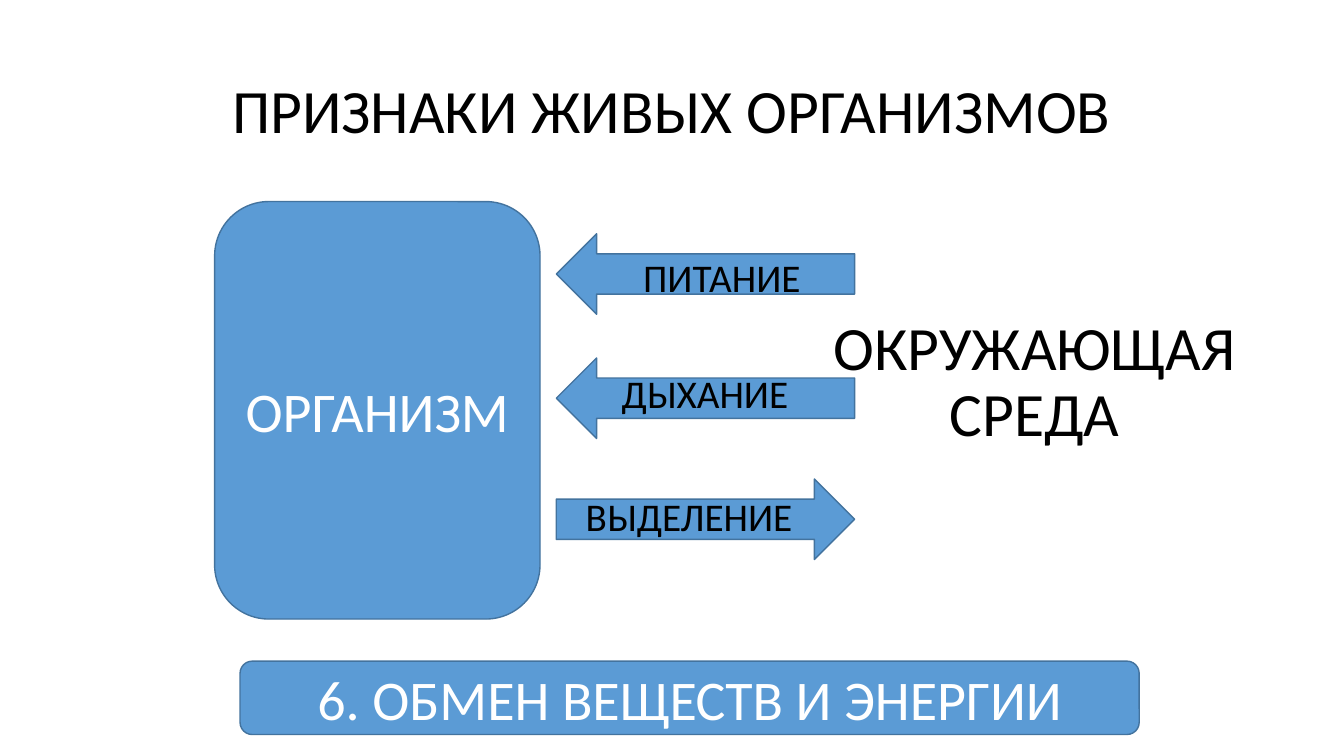
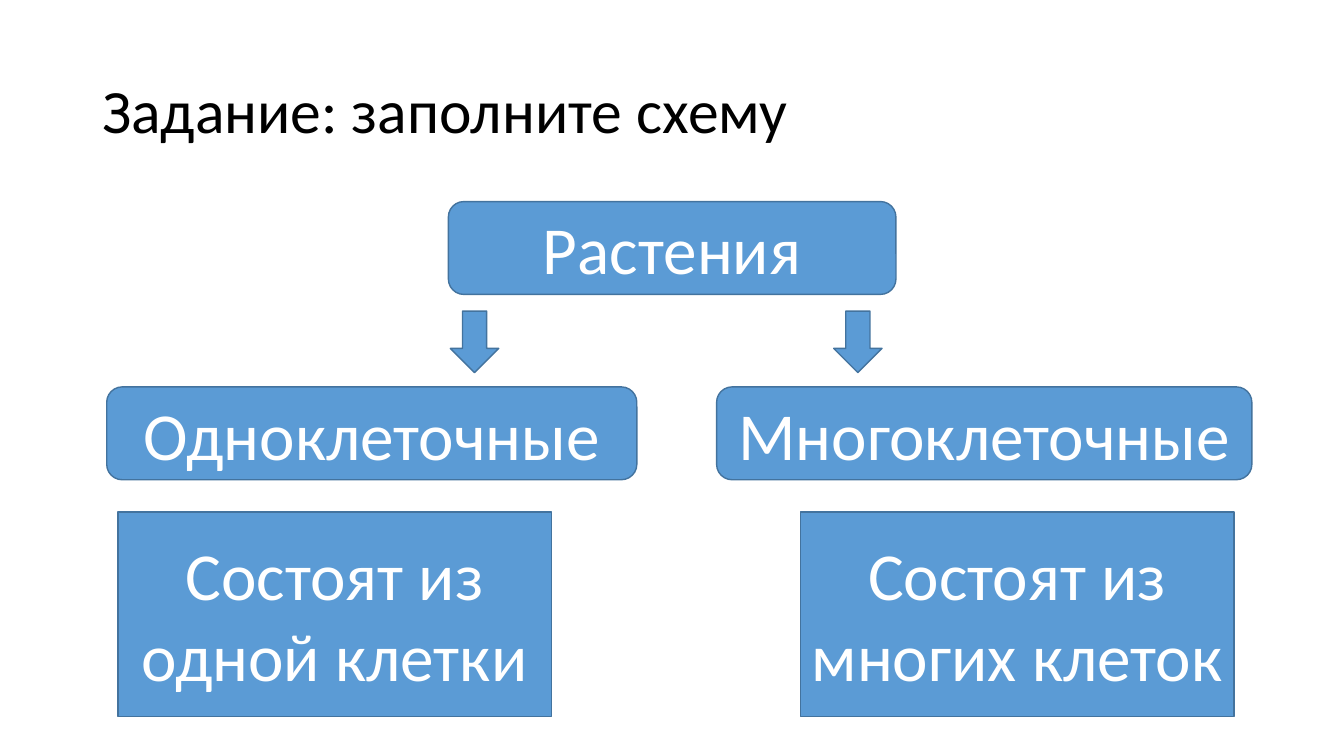
from pptx import Presentation
from pptx.dml.color import RGBColor
from pptx.enum.shapes import MSO_SHAPE
from pptx.enum.text import MSO_ANCHOR, PP_ALIGN
from pptx.util import Cm, Pt

ROUND = MSO_SHAPE.ROUNDED_RECTANGLE
RECT = MSO_SHAPE.RECTANGLE
LEFT_ARROW = MSO_SHAPE.LEFT_ARROW
RIGHT_ARROW = MSO_SHAPE.RIGHT_ARROW
DOWN_ARROW = MSO_SHAPE.DOWN_ARROW
TOP, MIDDLE = MSO_ANCHOR.TOP, MSO_ANCHOR.MIDDLE
LEFT, CENTER = PP_ALIGN.LEFT, PP_ALIGN.CENTER

FONT = "Calibri"
BLUE, EDGE = "5B9BD5", "43739E"
BLACK, WHITE = "000000", "FFFFFF"


def paint(color, value):
    color.rgb = RGBColor.from_string(value)


def write(shape, text, size, color, align=CENTER, anchor=MIDDLE,
          wrap=True, lead=1.0):
    frame = shape.text_frame
    frame.word_wrap = wrap
    frame.vertical_anchor = anchor
    para = frame.paragraphs[0]
    para.alignment = align
    para.line_spacing = lead
    run = para.add_run()
    run.text = text
    run.font.name = FONT
    run.font.size = Pt(size)
    paint(run.font.color, color)


def add_block(slide, kind, x, y, w, h, text="", size=48):
    """Add a blue shape, with white text if any is given."""
    shape = slide.shapes.add_shape(kind, Cm(x), Cm(y), Cm(w), Cm(h))
    shape.shadow.inherit = False
    shape.fill.solid()
    paint(shape.fill.fore_color, BLUE)
    paint(shape.line.color, EDGE)
    shape.line.width = Pt(1)
    if text:
        write(shape, text, size, WHITE)


def add_text(slide, x, y, w, h, text, size, **style):
    box = slide.shapes.add_textbox(Cm(x), Cm(y), Cm(w), Cm(h))
    write(box, text, size, BLACK, **style)


def add_page(deck, title, align):
    slide = deck.slides.add_slide(deck.slide_layouts[6])
    add_text(slide, 2.33, 1.01, 29.21, 3.68, title, 44, align=align, lead=0.9)
    return slide


def add_signs(deck):
    slide = add_page(deck, "ПРИЗНАКИ ЖИВЫХ ОРГАНИЗМОВ", CENTER)
    add_text(slide, 19.63, 7.87, 12.9, 3.71, "ОКРУЖАЮЩАЯ СРЕДА", 44,
             anchor=TOP, lead=0.9)
    add_block(slide, ROUND, 5.41, 5.08, 8.2, 10.52, "ОРГАНИЗМ", 40)
    flows = [
        (LEFT_ARROW, 5.89, "ПИТАНИЕ", 15.93, 6.25, 4.52),
        (LEFT_ARROW, 9.02, "ДЫХАНИЕ", 15.39, 9.19, 4.75),
        (RIGHT_ARROW, 12.07, "ВЫДЕЛЕНИЕ", 14.48, 12.27, 5.77),
    ]
    for kind, top, text, x, y, w in flows:
        add_block(slide, kind, 14.02, top, 7.52, 2.03)
        add_text(slide, x, y, w, 1.45, text, 28, anchor=TOP, wrap=False)
    add_block(slide, ROUND, 6.05, 16.66, 22.66, 1.85,
              "6. ОБМЕН ВЕЩЕСТВ И ЭНЕРГИИ", 40)


def add_task(deck):
    slide = add_page(deck, "Задание: заполните схему", LEFT)
    add_block(slide, ROUND, 11.3, 5.08, 11.28, 2.34, "Растения")
    kinds = [
        (11.35, 2.69, 13.36, "Одноклеточные", 2.97, "Состоят из одной клетки"),
        (21.01, 18.06, 13.49, "Многоклеточные", 20.17,
         "Состоят из многих клеток"),
    ]
    for arrow, x, w, name, left, note in kinds:
        add_block(slide, DOWN_ARROW, arrow, 7.84, 1.22, 1.55)
        add_block(slide, ROUND, x, 9.75, w, 2.34, name)
        add_block(slide, RECT, left, 12.9, 10.93, 5.16, note)


def main():
    deck = Presentation()
    deck.slide_width, deck.slide_height = Cm(33.87), Cm(19.05)
    add_signs(deck)
    add_task(deck)
    deck.save("out.pptx")


if __name__ == "__main__":
    main()
